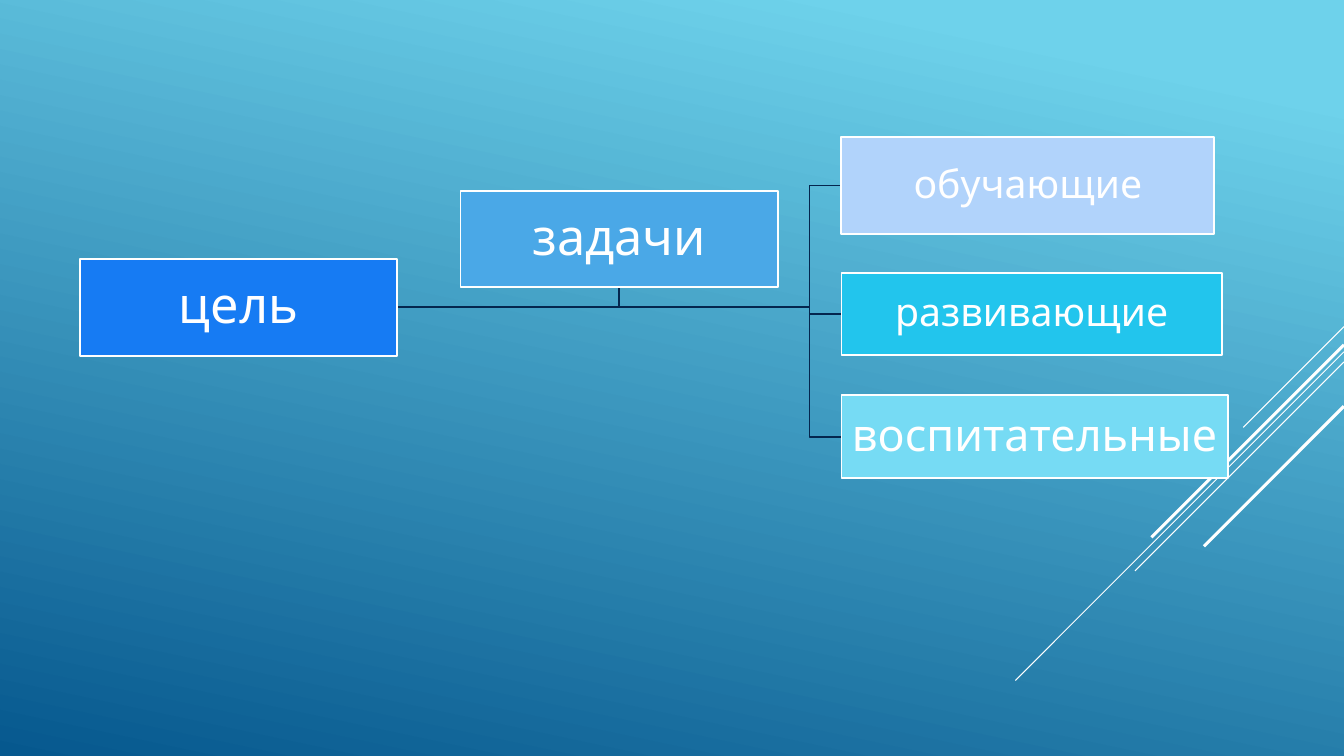
from dataclasses import dataclass

from lxml.etree import SubElement
from pptx import Presentation
from pptx.dml.color import RGBColor as RGB
from pptx.enum.shapes import MSO_CONNECTOR as LINE, MSO_SHAPE as SHAPE
from pptx.enum.text import MSO_ANCHOR as ANCHOR, PP_ALIGN as ALIGN
from pptx.oxml.ns import qn
from pptx.util import Pt


@dataclass(frozen=True)
class Theme:
    font: str = "Quicksand"
    white: str = "FFFFFF"
    link: str = "04264E"
    sky: str = "6ED2EB"
    deep: str = "06588E"
    goal: str = "167BF3"
    tasks: str = "4AA8E7"
    teach: str = "B1D3FB"
    grow: str = "22C5ED"
    raising: str = "76DBF4"
    large: int = 36
    medium: int = 32
    small: int = 28
    edge: float = 1.25


T = Theme()
WIDE, HIGH = 960, 540
TRUNK = 578.2  # x where the links to the right column branch

# right end at the slide edge: top y, run of the 45° diagonal, weight
RAYS = [
    (233.3, 72, 0.75),
    (251.3, 234.7, 0.75),
    (258.5, 149.3, 0.75),
    (246.3, 137.5, 2.25),
    (290.2, 100, 2.25),
]


def paint(slide):
    """Fill the background with the diagonal gradient."""
    fill = slide.background.fill
    fill.gradient()
    fill.gradient_angle = 258
    stops = zip(fill.gradient_stops, [(0.1, T.sky), (1, T.deep)])
    for stop, (place, color) in stops:
        stop.position = place
        stop.color.rgb = RGB.from_string(color)


def stroke(shape, color, weight):
    shape.line.color.rgb = RGB.from_string(color)
    shape.line.width = Pt(weight)


def ray(slide, top, run, weight):
    line = slide.shapes.add_connector(
        LINE.STRAIGHT, Pt(WIDE), Pt(top), Pt(WIDE - run), Pt(top + run))
    stroke(line, T.white, weight)
    SubElement(line.element.spPr, qn("a:effectLst"))


def link(slide, *points):
    """Draw an open bent line through the points."""
    start, *rest = [(Pt(x), Pt(y)) for x, y in points]
    form = slide.shapes.build_freeform(*start)
    form.add_line_segments(rest, close=False)
    bend = form.convert_to_shape()
    bend.shadow.inherit = False
    bend.fill.background()
    stroke(bend, T.link, T.edge)


def box(slide, label, size, color, place):
    rect = slide.shapes.add_shape(SHAPE.RECTANGLE, *map(Pt, place))
    rect.shadow.inherit = False
    rect.fill.solid()
    rect.fill.fore_color.rgb = RGB.from_string(color)
    stroke(rect, T.white, T.edge)
    frame = rect.text_frame
    frame.text = label
    frame.word_wrap = True
    frame.vertical_anchor = ANCHOR.MIDDLE
    frame.margin_left = frame.margin_right = Pt(2)
    frame.margin_top = frame.margin_bottom = Pt(2)
    para = frame.paragraphs[0]
    para.alignment = ALIGN.CENTER
    para.line_spacing = 0.9
    font = para.runs[0].font
    font.name, font.size = T.font, Pt(size)
    font.color.rgb = RGB.from_string(T.white)


def main():
    deck = Presentation()
    deck.slide_width, deck.slide_height = Pt(WIDE), Pt(HIGH)
    slide = deck.slides.add_slide(deck.slide_layouts[6])
    paint(slide)
    for item in RAYS:
        ray(slide, *item)

    goal = (56.9, 185, 226.8, 69.1)
    tasks = (329, 136.2, 226.8, 69.1)
    kinds = [
        ("обучающие", T.small, T.teach, (601, 97.9, 266.4, 69.1)),
        ("развивающие", T.small, T.grow, (601, 195.1, 271.8, 58.5)),
        ("воспитательные", T.medium, T.raising, (601, 282.2, 276, 59.5)),
    ]

    left, top, width, height = goal
    start = (left + width, top + height / 2)
    level = start[1]
    left, top, width, height = tasks
    mid = left + width / 2
    link(slide, start, (mid, level), (mid, top + height))
    for _, _, _, (left, top, _, height) in kinds:
        row = top + height / 2
        link(slide, start, (TRUNK, level), (TRUNK, row), (left, row))

    box(slide, "цель", T.large, T.goal, goal)
    box(slide, "задачи", T.large, T.tasks, tasks)
    for kind in kinds:
        box(slide, *kind)
    deck.save("out.pptx")


if __name__ == "__main__":
    main()
